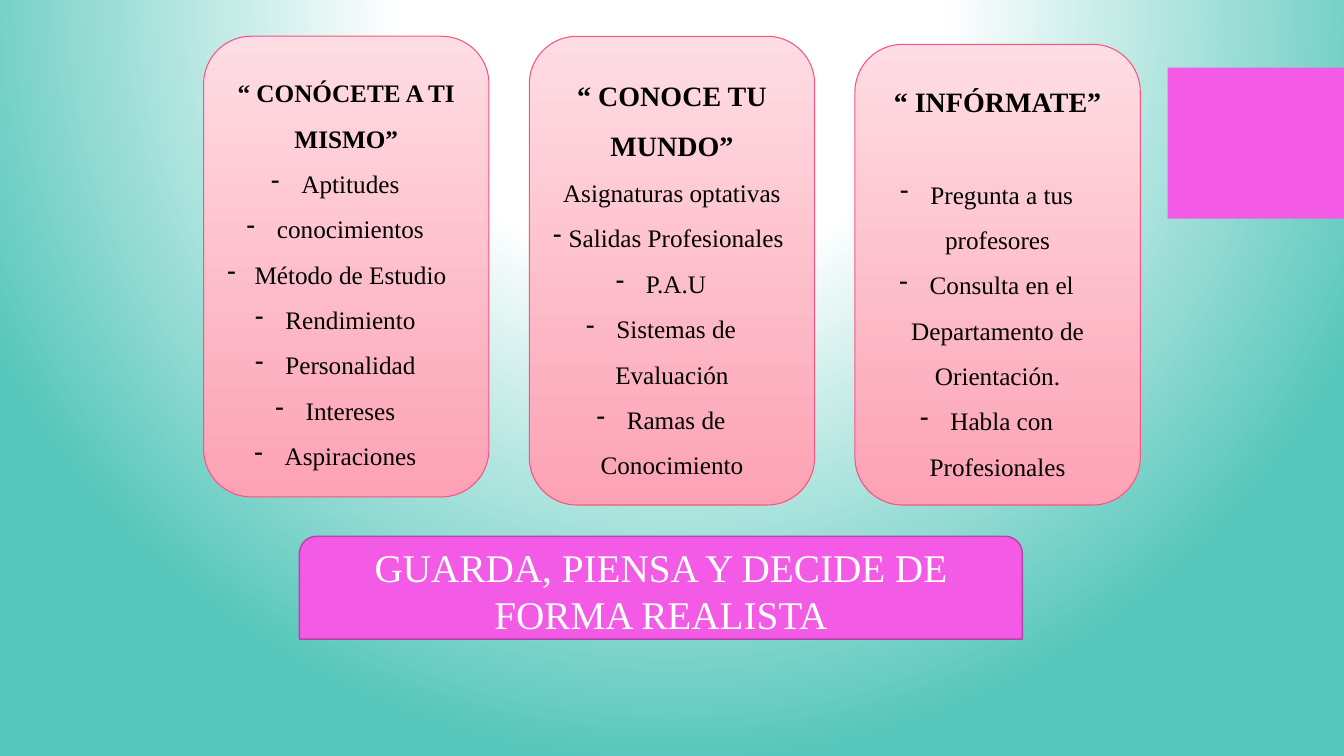
from pptx import Presentation
from pptx.dml.color import RGBColor
from pptx.enum.shapes import MSO_SHAPE
from pptx.enum.text import MSO_ANCHOR, PP_ALIGN
from pptx.oxml import parse_xml
from pptx.oxml.ns import nsdecls
from pptx.util import Inches, Pt

FONT = "Times New Roman"
MAGENTA = "F35AE6"

# Heading, heading size, plain line, bullets, space before the list, top, height
CARDS = [
    ("“ CONÓCETE A TI MISMO”", 18, "",
     ["Aptitudes", "conocimientos", "Método de Estudio", "Rendimiento",
      "Personalidad", "Intereses", "Aspiraciones"], 0, 0.36, 4.57),
    ("“ CONOCE TU MUNDO”", 20, "Asignaturas optativas",
     ["Salidas Profesionales", "P.A.U", "Sistemas de Evaluación",
      "Ramas de Conocimiento"], 0, 0.36, 4.65),
    ("“ INFÓRMATE”", 20, "",
     ["Pregunta a tus profesores", "Consulta en el Departamento de Orientación.",
      "Habla con Profesionales"], 32.4, 0.44, 4.57),
]
CARD_LEFT, CARD_STEP, CARD_WIDTH = 2.02, 3.23, 2.83
BANNER = "GUARDA, PIENSA Y DECIDE DE FORMA REALISTA"

BACKGROUND = f"""<p:bg {nsdecls('p', 'a')}><p:bgPr><a:gradFill rotWithShape="1">
<a:gsLst><a:gs pos="0"><a:srgbClr val="FFFFFF"/></a:gs>
<a:gs pos="35000"><a:srgbClr val="FFFFFF"/></a:gs>
<a:gs pos="100000"><a:srgbClr val="55C6BA"/></a:gs></a:gsLst>
<a:path path="circle"><a:fillToRect l="50000" t="-80000" r="50000" b="180000"/></a:path>
</a:gradFill><a:effectLst/></p:bgPr></p:bg>"""


def color(value):
    return RGBColor.from_string(value)


def add_box(page, kind, left, top, width, height, fill, line=None, line_width=1):
    """Add a shape; a pair of fill colours makes a top-to-bottom gradient."""
    box = page.shapes.add_shape(kind, *map(Inches, (left, top, width, height)))
    box.shadow.inherit = False
    if isinstance(fill, tuple):
        box.fill.gradient()
        box.fill.gradient_angle = 270
        for stop, value, position in zip(box.fill.gradient_stops, fill, (0, 1)):
            stop.color.rgb = color(value)
            stop.position = position
    else:
        box.fill.solid()
        box.fill.fore_color.rgb = color(fill)
    if line:
        box.line.color.rgb = color(line)
        box.line.width = Pt(line_width)
    else:
        box.line.fill.background()
    box.text_frame.word_wrap = True
    box.text_frame.vertical_anchor = MSO_ANCHOR.MIDDLE
    return box


def style_span(span, size, value, bold=False):
    span.font.name = FONT
    span.font.size = Pt(size)
    span.font.bold = bold
    span.font.color.rgb = color(value)


def add_bullet(para):
    properties = para._p.get_or_add_pPr()
    properties.set("marL", "0")
    properties.set("indent", str(-Inches(0.3)))
    properties.append(parse_xml(f'<a:buFontTx {nsdecls("a")}/>'))
    properties.append(parse_xml(f'<a:buChar {nsdecls("a")} char="-"/>'))


def fill_card(frame, heading, heading_size, plain_line, bullets, list_space):
    frame.text = "\n".join([heading, *bullets])
    for index, para in enumerate(frame.paragraphs):
        para.alignment = PP_ALIGN.CENTER
        para.line_spacing = 1.5
        if index == 1 and list_space:
            para.space_before = Pt(list_space)
        if index:
            add_bullet(para)
        style_span(para.runs[0], 18 if index else heading_size, "000000", not index)
    if plain_line:
        span = frame.paragraphs[0].add_run()
        span.text = " " + plain_line
        style_span(span, 18, "000000")


def main():
    deck = Presentation()
    deck.slide_width, deck.slide_height = Inches(13.33), Inches(7.5)
    page = deck.slides.add_slide(deck.slide_layouts[6])
    page.element.cSld.insert(0, parse_xml(BACKGROUND))

    add_box(page, MSO_SHAPE.RECTANGLE, 11.58, 0.67, 1.75, 1.5, MAGENTA)
    for column, (*content, top, height) in enumerate(CARDS):
        card = add_box(page, MSO_SHAPE.FLOWCHART_ALTERNATE_PROCESS,
                       CARD_LEFT + column * CARD_STEP, top, CARD_WIDTH, height,
                       ("FEDDE4", "FDA2B4"), "FC5283", 0.75)
        fill_card(card.text_frame, *content)

    banner = add_box(page, MSO_SHAPE.ROUND_2_SAME_RECTANGLE, 2.97, 5.32, 7.17, 1.02,
                     MAGENTA, "B443AA")
    banner.text_frame.text = BANNER
    para = banner.text_frame.paragraphs[0]
    para.alignment = PP_ALIGN.CENTER
    style_span(para.runs[0], 28, "FFFFFF")
    deck.save("out.pptx")


if __name__ == "__main__":
    main()
